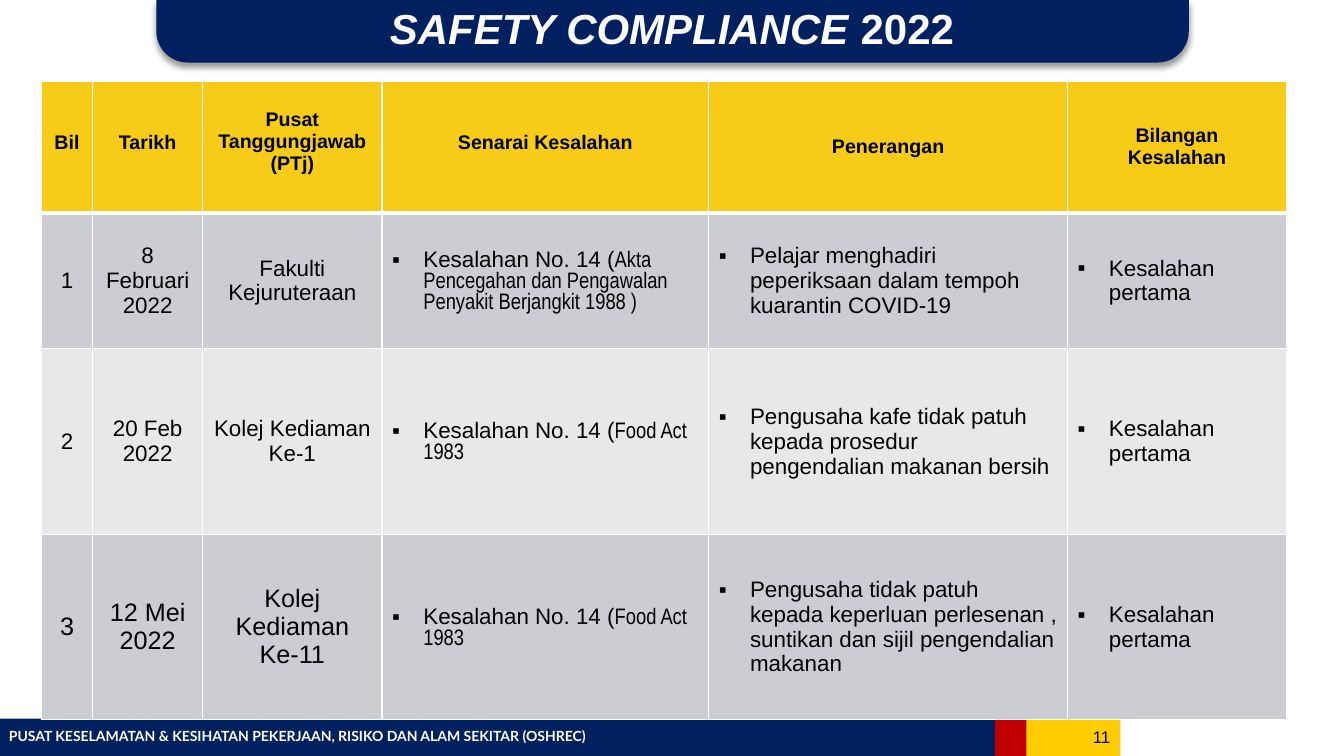
import pptx
import pptx.util
import pptx.dml.color
import pptx.enum.shapes
import pptx.enum.text
import pptx.oxml
import pptx.oxml.ns

Inches, Pt = pptx.util.Inches, pptx.util.Pt
SHAPE = pptx.enum.shapes.MSO_SHAPE
ALIGN = pptx.enum.text.PP_ALIGN
ANCHOR = pptx.enum.text.MSO_ANCHOR

COLORS = {
    "navy": "002060", "gold": "FFCC00", "red": "C00000", "header": "F6CC18",
    "band_dark": "CCCDD2", "band_light": "E7E8EA", "white": "FFFFFF", "black": "000000",
}
INDENT = 0.31

COLUMN_WIDTHS = [0.51, 1.09, 1.78, 3.24, 3.56, 2.17]
ROW_HEIGHTS = [1.3, 1.35, 1.84, 1.84]
# Heading text and its top margin; None means centred vertically
HEADINGS = [
    ("Bil", 0.5), ("Tarikh", 0.5), ("Pusat Tanggungjawab (PTj)", 0.27),
    ("Senarai Kesalahan", 0.5), ("Penerangan", None), ("Bilangan\nKesalahan", None),
]
OFFENCE = "Kesalahan No. 14 ("
REPEAT = "Kesalahan\npertama"
# Plain cells, law, explanation, size of the plain cells
RECORDS = [
    (["1", "8 Februari 2022", "Fakulti Kejuruteraan"],
     "Akta Pencegahan dan Pengawalan Penyakit Berjangkit 1988 )",
     "Pelajar menghadiri peperiksaan dalam tempoh kuarantin COVID-19", 16),
    (["2", "20 Feb 2022", "Kolej Kediaman Ke-1"], "Food Act 1983",
     "Pengusaha kafe tidak patuh kepada prosedur pengendalian makanan bersih", 16),
    (["3", "12 Mei 2022", "Kolej Kediaman Ke-11"], "Food Act 1983",
     "Pengusaha tidak patuh kepada keperluan perlesenan , suntikan dan sijil "
     "pengendalian makanan", 18),
]


def color(name):
    return pptx.dml.color.RGBColor.from_string(COLORS[name])


def xml(text):
    return pptx.oxml.parse_xml(text.replace(">", f" {pptx.oxml.ns.nsdecls('a')}>", 1))


def style(span, size, name="black", font="Arial", bold=False, italic=False):
    span.font.size = Pt(size)
    span.font.name = font
    span.font.bold = bold
    span.font.italic = italic
    span.font.color.rgb = color(name)


def add_block(page, preset, box, fill):
    shape = page.shapes.add_shape(preset, *map(Inches, box))
    shape.fill.solid()
    shape.fill.fore_color.rgb = color(fill)
    shape.line.fill.background()
    shape.shadow.inherit = False
    return shape


def add_text(page, box, text, align, anchor=ANCHOR.MIDDLE):
    frame = page.shapes.add_textbox(*map(Inches, box)).text_frame
    frame.word_wrap = True
    frame.vertical_anchor = anchor
    frame.text = text
    frame.paragraphs[0].alignment = align
    return frame.paragraphs[0]


def add_title(page, box):
    left, top, width, height = box
    banner = add_block(page, SHAPE.ROUND_2_SAME_RECTANGLE, box, "navy")
    banner.rotation = 180
    banner.adjustments[0] = 0.5
    effects = banner._element.spPr.find(pptx.oxml.ns.qn("a:effectLst"))
    effects.append(xml(
        '<a:outerShdw blurRad="50800" dist="38100" dir="5400000" rotWithShape="0">'
        '<a:srgbClr val="000000"><a:alpha val="40000"/></a:srgbClr></a:outerShdw>'))
    para = add_text(page, (left + 0.31, top + 0.05, width - 0.63, height - 0.17),
                    "SAFETY COMPLIANCE ", ALIGN.CENTER)
    para.add_run().text = "2022"
    for span, italic in zip(para.runs, (True, False)):
        style(span, 30, "white", bold=True, italic=italic)


def add_footer(page, box):
    left, top, width, height = box
    right = left + width
    add_block(page, SHAPE.RECTANGLE, box, "navy")
    add_block(page, SHAPE.RECTANGLE, (right - 1.24, top, 1.24, height), "gold")
    add_block(page, SHAPE.RECTANGLE, (right - 1.24, top, 0.31, height), "red")
    label = add_text(page, (left - 0.01, top + 0.04, 9.29, 0.27),
                     "PUSAT KESELAMATAN & KESIHATAN PEKERJAAN, RISIKO DAN ALAM SEKITAR (OSHREC)",
                     ALIGN.LEFT, ANCHOR.TOP)
    style(label.runs[0], 10, "white", "Lato", bold=True)
    number = add_text(page, (right - 1.13, top, 1.13, 0.35), "11", ALIGN.RIGHT)
    style(number.runs[0], 12)


def paint_cell(cell, fill, bottom=1):
    cell.fill.solid()
    cell.fill.fore_color.rgb = color(fill)
    widths = {"lnL": 1, "lnR": 1, "lnT": 1, "lnB": bottom}
    for place, (side, points) in enumerate(widths.items()):
        cell._tc.get_or_add_tcPr().insert(place, xml(
            f'<a:{side} w="{Pt(points)}"><a:solidFill><a:srgbClr val="{COLORS["white"]}"/>'
            f'</a:solidFill></a:{side}>'))


def write_cell(cell, text, size, bold=False, bulleted=False):
    cell.vertical_anchor = ANCHOR.MIDDLE
    cell.text_frame.text = text
    for index, para in enumerate(cell.text_frame.paragraphs):
        if bulleted:
            props = para._p.get_or_add_pPr()
            props.set("marL", str(Inches(INDENT)))
            props.set("indent", str(Inches(0 if index else -INDENT)))
            if index == 0:
                props.append(xml('<a:buFont typeface="Arial"/>'.replace("/>", "></a:buFont>")))
                props.append(xml('<a:buChar char="▪"></a:buChar>'))
        else:
            para.alignment = ALIGN.CENTER
        for span in para.runs:
            style(span, size, bold=bold)


def add_records(page, box):
    rows, columns = len(ROW_HEIGHTS), len(COLUMN_WIDTHS)
    table = page.shapes.add_table(rows, columns, *map(Inches, box)).table
    for column, width in zip(table.columns, COLUMN_WIDTHS):
        column.width = Inches(width)
    for row, height in zip(table.rows, ROW_HEIGHTS):
        row.height = Inches(height)

    # Heading row
    for column, (heading, margin) in enumerate(HEADINGS):
        cell = table.cell(0, column)
        paint_cell(cell, "header", bottom=3)
        write_cell(cell, heading, 14, bold=True)
        if margin is not None:
            cell.vertical_anchor = ANCHOR.TOP
            cell.margin_top = Inches(margin)

    # Offence rows
    for row, (plain, law, details, size) in enumerate(RECORDS, start=1):
        for column, text in enumerate(plain + [OFFENCE, details, REPEAT]):
            cell = table.cell(row, column)
            bulleted = column >= len(plain)
            paint_cell(cell, "band_dark" if row % 2 else "band_light")
            write_cell(cell, text, 16 if bulleted else size, bulleted=bulleted)
        span = table.cell(row, len(plain)).text_frame.paragraphs[0].add_run()
        span.text = law
        style(span, 16, font="Arial Narrow")


def main():
    deck = pptx.Presentation()
    deck.slide_width, deck.slide_height = Inches(13.33), Inches(7.5)
    page = deck.slides.add_slide(deck.slide_layouts[6])
    add_title(page, (1.55, 0, 10.24, 0.62))
    add_footer(page, (0, 7.13, 11.11, 0.37))
    add_records(page, (0.41, 0.81, sum(COLUMN_WIDTHS), sum(ROW_HEIGHTS)))
    deck.save("out.pptx")


if __name__ == "__main__":
    main()
